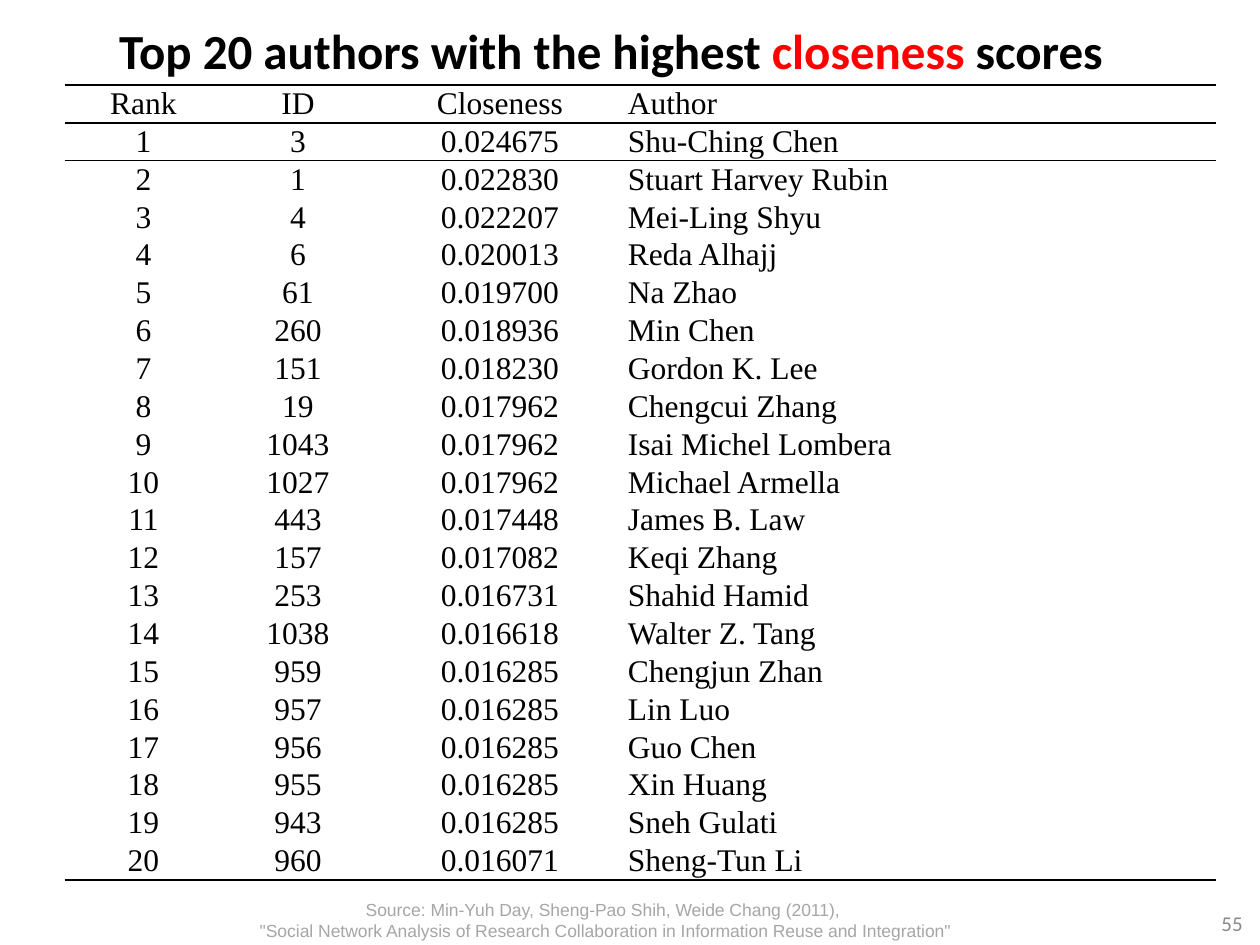
import dataclasses

import lxml.etree
import pptx
import pptx.dml.color
import pptx.enum.text
import pptx.oxml.ns
import pptx.util

SLIDE_WIDTH, SLIDE_HEIGHT = 1260, 945
EMU_PER_PX = 914400 / 126
NO_STYLE_NO_GRID = "{2D5ABB26-0587-4C30-8999-92F81FD0307C}"
ALIGN = pptx.enum.text.PP_ALIGN
ANCHOR = pptx.enum.text.MSO_ANCHOR


@dataclasses.dataclass(frozen=True)
class Theme:
    text: str = "000000"
    accent: str = "FF0000"
    page_number: str = "898989"
    source: str = "A6A6A6"
    title_font: str = "Calibri"
    table_font: str = "Times New Roman"
    source_font: str = "Arial"
    title_size: int = 28
    table_size: int = 18
    page_number_size: int = 12
    source_size: int = 10
    rule_width: int = 1


THEME = Theme()

HEADERS = ("Rank", "ID", "Closeness", "Author")
AUTHORS = (
    ("3", "0.024675", "Shu-Ching Chen"),
    ("1", "0.022830", "Stuart Harvey Rubin"),
    ("4", "0.022207", "Mei-Ling Shyu"),
    ("6", "0.020013", "Reda Alhajj"),
    ("61", "0.019700", "Na Zhao"),
    ("260", "0.018936", "Min Chen"),
    ("151", "0.018230", "Gordon K. Lee"),
    ("19", "0.017962", "Chengcui Zhang"),
    ("1043", "0.017962", "Isai Michel Lombera"),
    ("1027", "0.017962", "Michael Armella"),
    ("443", "0.017448", "James B. Law"),
    ("157", "0.017082", "Keqi Zhang"),
    ("253", "0.016731", "Shahid Hamid"),
    ("1038", "0.016618", "Walter Z. Tang"),
    ("959", "0.016285", "Chengjun Zhan"),
    ("957", "0.016285", "Lin Luo"),
    ("956", "0.016285", "Guo Chen"),
    ("955", "0.016285", "Xin Huang"),
    ("943", "0.016285", "Sneh Gulati"),
    ("960", "0.016071", "Sheng-Tun Li"),
)


def px(length):
    return pptx.util.Emu(round(length * EMU_PER_PX))


def rgb(color):
    return pptx.dml.color.RGBColor.from_string(color)


def style_paragraph(paragraph, font_name, size, color, alignment):
    paragraph.alignment = alignment
    paragraph.font.name = font_name
    paragraph.font.size = pptx.util.Pt(size)
    paragraph.font.color.rgb = rgb(color)


def add_text_box(slide, box, anchor):
    """Add a wrapping text box and return its first paragraph."""
    frame = slide.shapes.add_textbox(*map(px, box)).text_frame
    frame.word_wrap = True
    frame.vertical_anchor = anchor
    return frame.paragraphs[0]


def add_title(slide, box):
    paragraph = add_text_box(slide, box, ANCHOR.MIDDLE)
    style_paragraph(paragraph, THEME.title_font, THEME.title_size, THEME.text, ALIGN.CENTER)
    paragraph.font.bold = True
    for text, color in (
        ("Top 20 authors with the highest ", THEME.text),
        ("closeness", THEME.accent),
        (" scores", THEME.text),
    ):
        run = paragraph.add_run()
        run.text = text
        run.font.color.rgb = rgb(color)


def add_rules(cell, edges):
    """Draw horizontal rules on the given edges: lnT above, lnB below."""
    properties = cell._tc.get_or_add_tcPr()
    for position, edge in enumerate(edges):
        line = lxml.etree.Element(
            pptx.oxml.ns.qn(f"a:{edge}"), w=str(pptx.util.Pt(THEME.rule_width))
        )
        fill = lxml.etree.SubElement(line, pptx.oxml.ns.qn("a:solidFill"))
        lxml.etree.SubElement(fill, pptx.oxml.ns.qn("a:srgbClr"), val=THEME.text)
        properties.insert(position, line)


def add_author_table(slide, box, column_widths):
    rows = [HEADERS] + [(str(rank), *author) for rank, author in enumerate(AUTHORS, 1)]
    table = slide.shapes.add_table(len(rows), len(HEADERS), *map(px, box)).table
    table.first_row = table.horz_banding = False
    table._tbl.tblPr.find(pptx.oxml.ns.qn("a:tableStyleId")).text = NO_STYLE_NO_GRID
    for column, width in zip(table.columns, column_widths):
        column.width = px(width)

    edges_by_row = {0: ("lnT", "lnB"), 1: ("lnT",), len(rows) - 1: ("lnB",)}
    for row_index, values in enumerate(rows):
        table.rows[row_index].height = px(box[3] / len(rows))
        for column_index, value in enumerate(values):
            cell = table.cell(row_index, column_index)
            cell.text = value
            cell.fill.background()
            cell.vertical_anchor = ANCHOR.MIDDLE
            cell.margin_left = cell.margin_right = px(2)
            cell.margin_top = cell.margin_bottom = 0
            is_author = HEADERS[column_index] == "Author"
            style_paragraph(
                cell.text_frame.paragraphs[0], THEME.table_font, THEME.table_size,
                THEME.text, ALIGN.LEFT if is_author else ALIGN.CENTER,
            )
            add_rules(cell, edges_by_row.get(row_index, ()))


def add_page_number(slide, box):
    paragraph = add_text_box(slide, box, ANCHOR.MIDDLE)
    paragraph.text = "55"
    style_paragraph(
        paragraph, THEME.title_font, THEME.page_number_size, THEME.page_number, ALIGN.RIGHT
    )


def add_source(slide, box):
    paragraph = add_text_box(slide, box, ANCHOR.TOP)
    paragraph.text = (
        "Source: Min-Yuh Day, Sheng-Pao Shih, Weide Chang (2011), \v"
        '"Social Network Analysis of Research Collaboration in Information Reuse and Integration"'
    )
    style_paragraph(
        paragraph, THEME.source_font, THEME.source_size, THEME.source, ALIGN.CENTER
    )


def main():
    presentation = pptx.Presentation()
    presentation.slide_width = px(SLIDE_WIDTH)
    presentation.slide_height = px(SLIDE_HEIGHT)
    slide = presentation.slides.add_slide(presentation.slide_layouts[6])

    # Heading
    add_title(slide, (44, 6, 1134, 87))
    # Ranking
    add_author_table(slide, (65, 85, 1151, 795), (157, 152, 252, 590))
    # Footer
    add_page_number(slide, (961, 898, 294, 50))
    add_source(slide, (94, 893, 1022, 55))

    presentation.save("out.pptx")


if __name__ == "__main__":
    main()
